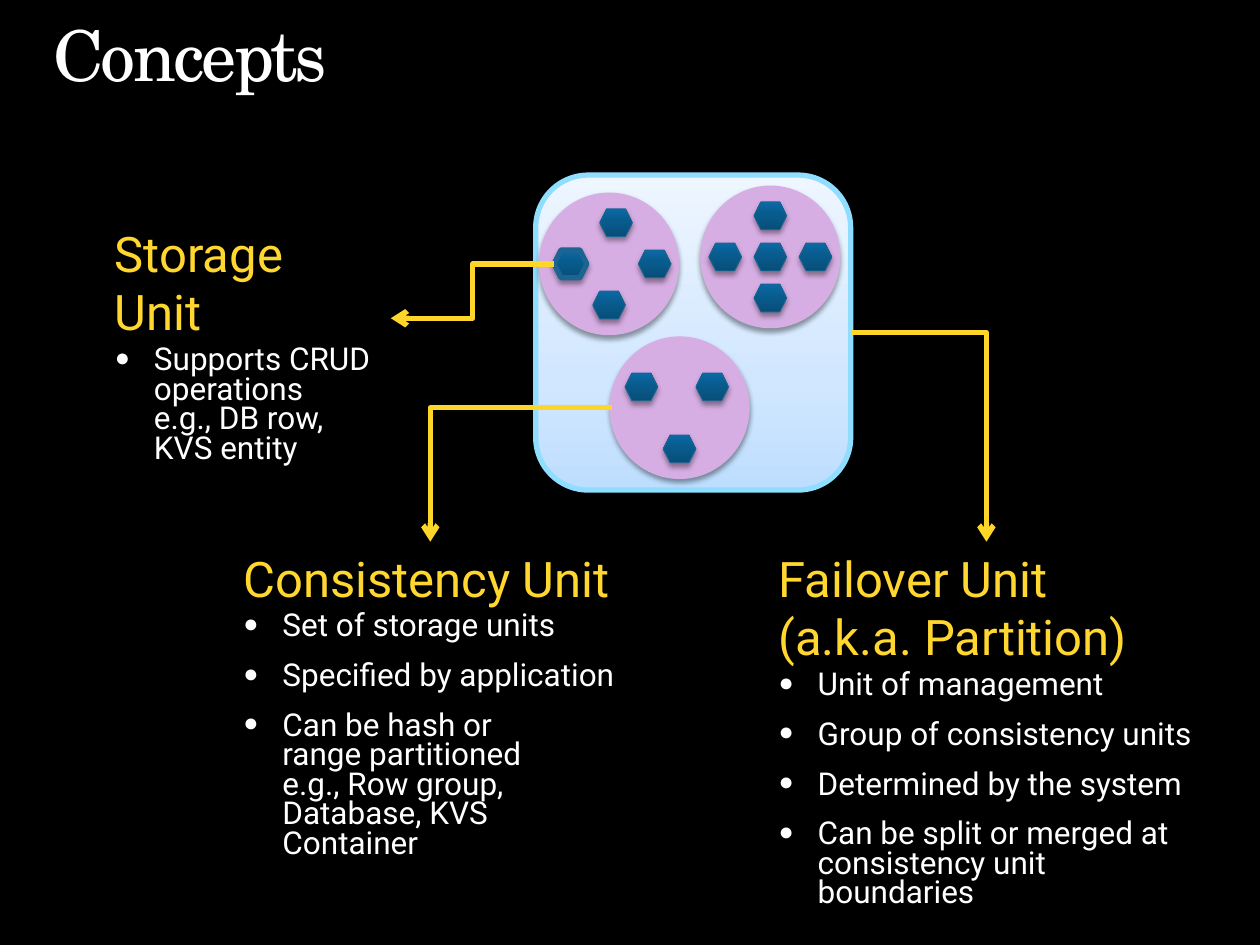
from dataclasses import dataclass

from lxml.etree import SubElement
from pptx import Presentation
from pptx.dml.color import RGBColor
from pptx.enum.shapes import MSO_CONNECTOR, MSO_SHAPE as Shape
from pptx.enum.text import MSO_ANCHOR, MSO_AUTO_SIZE, PP_ALIGN
from pptx.oxml.ns import qn
from pptx.util import Cm, Pt


@dataclass(frozen=True)
class Theme:
    background: str = "000000"
    text: str = "FFFFFF"
    heading: str = "FFD72F"
    arrow: str = "FED529"
    panel_line: str = "8FDDFF"
    group: str = "D7AEE4"
    unit_line: str = "1C6491"
    panel_stops: tuple = ((0, "BEDEFF"), (35, "D1E7FF"), (100, "EEF6FF"))
    unit_stops: tuple = ((0, "074E78"), (55, "085B8D"), (100, "0A6AA5"))
    title_font: str = "TeX Gyre Schola"
    body_font: str = "Roboto"
    title_size: float = 40
    heading_size: float = 28
    list_size: float = 18
    thick: float = 3
    thin: float = 0.5


def rgb(color):
    return RGBColor.from_string(color)


def add(parent, tag, **attrs):
    return SubElement(parent, qn(tag), {k: str(v) for k, v in attrs.items()})


class Deck:
    """Holds the theme and the current slide."""

    def __init__(self, slide, theme):
        self.slide, self.theme = slide, theme
        fill = slide.background.fill
        fill.solid()
        fill.fore_color.rgb = rgb(theme.background)

    def place(self, sp, left, top, width, height):
        sp.left, sp.top, sp.width, sp.height = map(Cm, (left, top, width, height))
        tf = sp.text_frame
        tf.word_wrap = True
        tf.auto_size = MSO_AUTO_SIZE.SHAPE_TO_FIT_TEXT
        tf.vertical_anchor = MSO_ANCHOR.TOP
        return tf

    def font(self, p, name, size, color):
        p.alignment = PP_ALIGN.LEFT
        p.font.name, p.font.size, p.font.bold = name, Pt(size), False
        p.font.color.rgb = rgb(color)

    def title(self, text, *box):
        t = self.theme
        tf = self.place(self.slide.shapes.title, *box)
        tf.margin_left = tf.margin_top = tf.margin_right = tf.margin_bottom = 0
        p = tf.paragraphs[0]
        p.line_spacing = 0.9
        self.font(p, t.title_font, t.title_size, t.text)
        r = p.add_run()
        r.text = text
        r._r.get_or_add_rPr().set("spc", "-150")

    def topic(self, idx, box, headings, items):
        """A coloured heading followed by a bulleted list."""
        t = self.theme
        sp = self.slide.placeholders[idx]
        tf = self.place(sp, *box)
        tf.text = "\n".join(headings)
        for p in tf.paragraphs:
            pPr = p._p.get_or_add_pPr()
            pPr.set("marL", "0")
            pPr.set("indent", "0")
            add(pPr, "a:buNone")
            p.space_before = Pt(0)
            self.font(p, t.body_font, t.heading_size, t.heading)
        for item in items:
            p = tf.add_paragraph()
            p.text = item
            self.bullet(p)
            p.line_spacing, p.space_before, p.space_after = 0.78, Pt(3.6), Pt(8)
            self.font(p, t.body_font, t.list_size, t.text)
        return sp

    def bullet(self, p):
        pPr = p._p.get_or_add_pPr()
        pPr.set("marL", str(Cm(0.79)))
        pPr.set("indent", str(-Cm(0.79)))
        add(add(pPr, "a:buClr"), "a:srgbClr", val=self.theme.text)
        add(pPr, "a:buSzPct", val=80000)
        add(pPr, "a:buChar", char="●")

    def shape(self, kind, box, fill, line, width, blur=3.1):
        """A shadowed shape; fill is one colour or a tuple of gradient stops."""
        sp = self.slide.shapes.add_shape(kind, *map(Cm, box))
        if isinstance(fill, str):
            sp.fill.solid()
            sp.fill.fore_color.rgb = rgb(fill)
        else:
            sp.fill.gradient()
            sp.fill.gradient_angle = 90
            stops = sp._element.spPr.find(".//" + qn("a:gsLst"))
            stops.clear()
            for pos, color in fill:
                gs = add(stops, "a:gs", pos=pos * 1000)
                add(gs, "a:srgbClr", val=color)
        sp.line.color.rgb = rgb(line)
        sp.line.width = Pt(width)
        sp.shadow.inherit = False
        effects = sp._element.spPr.find(qn("a:effectLst"))
        shadow = add(effects, "a:outerShdw", blurRad=Pt(blur), dist=Pt(2),
                     dir=5400000, rotWithShape=0)
        add(add(shadow, "a:srgbClr", val="000000"), "a:alpha", val=38000)
        return sp

    def centred(self, kind, x, y, size, *style):
        w, h = size
        return self.shape(kind, (x - w / 2, y - h / 2, w, h), *style)

    def arrow(self, start, end, target, side, bends=2):
        c = self.slide.shapes.add_connector(MSO_CONNECTOR.ELBOW, *map(Cm, start + end))
        c.end_connect(target, side)
        c.line.color.rgb = rgb(self.theme.arrow)
        c.line.width = Pt(self.theme.thick)
        spPr = c._element.spPr
        spPr.find(qn("a:prstGeom")).set("prst", f"bentConnector{bends + 1}")
        add(spPr.find(qn("a:ln")), "a:tailEnd", type="arrow")
        add(spPr, "a:effectLst")
        return c


def main():
    prs = Presentation()
    prs.slide_width, prs.slide_height = Cm(25.4), Cm(19.05)
    slide = prs.slides.add_slide(prs.slide_layouts[4])
    t = Theme()
    deck = Deck(slide, t)

    deck.title("Concepts", 1.07, 0.43, 23.24, 1.55)

    # Topics
    storage = deck.topic(1, (2.06, 4.37, 5.82, 4.09), ["Storage Unit"], [
        "Supports CRUD operations\ve.g., DB row, KVS entity"])
    consistency = deck.topic(2, (4.65, 10.92, 8.05, 6.1), ["Consistency Unit"], [
        "Set of storage units",
        "Specified by application",
        "Can be hash or\vrange partitioned\ve.g., Row group, Database, KVS Container"])
    failover = deck.topic(3, (15.44, 10.92, 8.89, 7.11),
                          ["Failover Unit", "(a.k.a. Partition)"], [
        "Unit of management",
        "Group of consistency units",
        "Determined by the system",
        "Can be split or merged at consistency unit boundaries"])
    spare = slide.placeholders[4]._element
    spare.getparent().remove(spare)

    # Partition panel
    panel = deck.shape(Shape.ROUNDED_RECTANGLE, (10.8, 3.53, 6.35, 6.35),
                       t.panel_stops, t.panel_line, t.thick, 3.5)

    # Groups: centre, then offsets of the storage units inside
    groups = [
        ((12.28, 5.32), [(0.14, -0.83), (0, 0.83), (0.92, 0), (-0.78, 0)]),
        ((15.53, 5.18), [(0, -0.83), (0, 0), (0.91, 0), (0, 0.83), (-0.91, 0)]),
        ((13.7, 8.22), [(0.66, -0.42), (-0.77, -0.42), (0, 0.83)]),
    ]
    highlighted = (0, 3)
    for g, ((x, y), offsets) in enumerate(groups):
        deck.centred(Shape.OVAL, x, y, (2.72, 2.77), t.group, t.group, t.thick)
        for u, (dx, dy) in enumerate(offsets):
            width = t.thick if (g, u) == highlighted else t.thin
            deck.centred(Shape.HEXAGON, x + dx, y + dy, (0.66, 0.56),
                         t.unit_stops, t.unit_line, width)

    # Arrows to the topics
    deck.arrow((11.18, 5.32), (7.88, 6.42), storage, 3)
    deck.arrow((12.34, 8.22), (8.68, 10.92), consistency, 0, bends=1)
    out = deck.arrow((17.15, 6.71), (19.88, 10.92), failover, 0, bends=1)
    out.begin_connect(panel, 3)

    prs.save("out.pptx")


if __name__ == "__main__":
    main()
